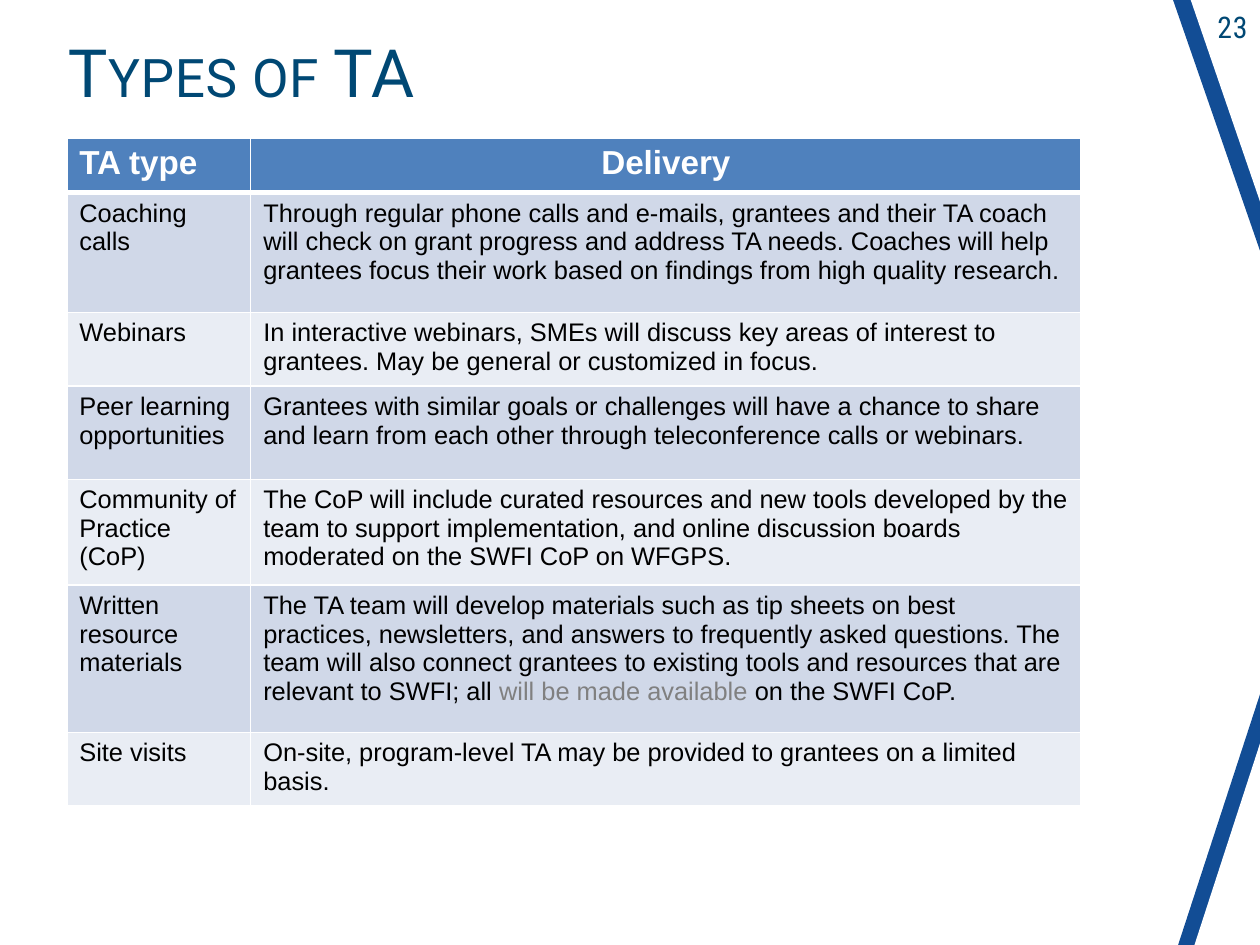
from lxml import etree
from pptx import Presentation
from pptx.dml.color import RGBColor
from pptx.enum.shapes import MSO_SHAPE
from pptx.enum.text import MSO_ANCHOR, PP_ALIGN
from pptx.oxml.ns import qn
from pptx.util import Inches, Pt

TRIANGLE = MSO_SHAPE.ISOSCELES_TRIANGLE
LEFT, CENTER, RIGHT = PP_ALIGN.LEFT, PP_ALIGN.CENTER, PP_ALIGN.RIGHT
TOP, MIDDLE = MSO_ANCHOR.TOP, MSO_ANCHOR.MIDDLE

COLUMN_WIDTHS = [1.46, 6.59]
ROW_HEIGHTS = [0.43, 0.95, 0.56, 0.74, 0.84, 1.17, 0.56]
HEADER = ["TA type", "Delivery"]

# Text between bars is shown in the muted colour
TA_TYPES = [
    ("Coaching calls",
     "Through regular phone calls and e-mails, grantees and their TA coach will "
     "check on grant progress and address TA needs. Coaches will help grantees "
     "focus their work based on findings from high quality research."),
    ("Webinars",
     "In interactive webinars, SMEs will discuss key areas of interest to "
     "grantees. May be general or customized in focus."),
    ("Peer learning opportunities",
     "Grantees with similar goals or challenges will have a chance to share and "
     "learn from each other through teleconference calls or webinars."),
    ("Community of Practice (CoP)",
     "The CoP will include curated resources and new tools developed by the team "
     "to support implementation, and online discussion boards moderated on the "
     "SWFI CoP on WFGPS."),
    ("Written resource materials",
     "The TA team will develop materials such as tip sheets on best practices, "
     "newsletters, and answers to frequently asked questions. The team will also "
     "connect grantees to existing tools and resources that are relevant to "
     "SWFI; all |will be made available |on the SWFI CoP."),
    ("Site visits",
     "On-site, program-level TA may be provided to grantees on a limited basis."),
]


def rgb(value):
    return RGBColor.from_string(value)


class SlideBuilder:
    navy, blue, white = "004874", "124D95", "FFFFFF"
    header_fill, bands = "4F81BD", ("D0D8E8", "E9EDF4")
    body, muted = "000000", "808080"
    table_font = "Arial"

    def __init__(self, page):
        self.page = page

    def corner_triangle(self, left, top, width, height, color, flipped=False):
        shape = self.page.shapes.add_shape(
            TRIANGLE, Inches(left), Inches(top), Inches(width), Inches(height))
        shape.adjustments[0] = 1
        shape.shadow.inherit = False
        shape.fill.solid()
        shape.fill.fore_color.rgb = rgb(color)
        shape.line.fill.background()
        if flipped:
            shape.element.spPr.find(qn("a:xfrm")).set("flipV", "1")

    def label(self, text, left, top, width, height, font, size,
              align=LEFT, anchor=TOP, small_caps=False, line_spacing=1.0):
        box = self.page.shapes.add_textbox(
            Inches(left), Inches(top), Inches(width), Inches(height))
        frame = box.text_frame
        frame.word_wrap = True
        frame.vertical_anchor = anchor
        para = frame.paragraphs[0]
        para.alignment = align
        para.line_spacing = line_spacing
        span = para.add_run()
        span.text = text
        self.style(para.font, font, size, self.navy)
        properties = span.font._element
        properties.set("spc", "40")
        if small_caps:
            properties.set("cap", "small")

    def style(self, font, name, size, color, bold=False):
        font.name, font.size, font.bold = name, Pt(size), bold
        font.color.rgb = rgb(color)

    def borders(self, cell, bottom):
        properties = cell._tc.get_or_add_tcPr()
        widths = {"a:lnL": 1, "a:lnR": 1, "a:lnT": 1, "a:lnB": bottom}
        for index, (tag, width) in enumerate(widths.items()):
            line = etree.Element(qn(tag), w=str(Pt(width)))
            fill = etree.SubElement(line, qn("a:solidFill"))
            etree.SubElement(fill, qn("a:srgbClr"), val=self.white)
            properties.insert(index, line)

    def cell(self, cell, text, fill, size, color, bold=False, align=LEFT, bottom=1):
        cell.margin_left = cell.margin_right = Inches(0.1)
        cell.margin_top = cell.margin_bottom = Inches(0.05)
        cell.fill.solid()
        cell.fill.fore_color.rgb = rgb(fill)
        self.borders(cell, bottom)
        para = cell.text_frame.paragraphs[0]
        para.alignment = align
        self.style(para.font, self.table_font, size, color, bold)
        for index, part in enumerate(text.split("|")):
            span = para.add_run()
            span.text = part
            if index % 2:
                span.font.color.rgb = rgb(self.muted)

    def table(self, left, top, header, rows):
        table = self.page.shapes.add_table(
            len(rows) + 1, len(header), Inches(left), Inches(top),
            Inches(sum(COLUMN_WIDTHS)), Inches(sum(ROW_HEIGHTS))).table
        for column, width in zip(table.columns, COLUMN_WIDTHS):
            column.width = Inches(width)
        for row, height in zip(table.rows, ROW_HEIGHTS):
            row.height = Inches(height)
        for column, (text, align) in enumerate(zip(header, (LEFT, CENTER))):
            self.cell(table.cell(0, column), text, self.header_fill, 19,
                      self.white, bold=True, align=align, bottom=3)
        for number, row in enumerate(rows, start=1):
            for column, text in enumerate(row):
                self.cell(table.cell(number, column), text,
                          self.bands[(number - 1) % 2], 14.5, self.body,
                          bottom=1)
        # The header's thick rule is shared with the row below it
        for column in range(len(header)):
            edge = table.cell(1, column)._tc.tcPr.find(qn("a:lnT"))
            edge.set("w", str(Pt(3)))


def main():
    deck = Presentation()
    deck.slide_width, deck.slide_height = Inches(10), Inches(7.5)
    slide = SlideBuilder(deck.slides.add_slide(deck.slide_layouts[6]))

    # Top corner stripe and page number
    slide.corner_triangle(9.31, 0, 0.69, 1.99, slide.blue, flipped=True)
    slide.corner_triangle(9.45, 0, 0.55, 1.6, slide.white, flipped=True)
    slide.label("23", 9.2, 0.02, 0.8, 0.39, "Roboto Condensed", 17, align=RIGHT)

    # Bottom corner stripe
    slide.corner_triangle(9.35, 5.51, 0.65, 1.99, slide.blue)
    slide.corner_triangle(9.48, 5.9, 0.52, 1.6, slide.white)

    # Title
    slide.label("Types of TA", 0.44, 0.19, 7.56, 0.85, "Roboto", 38,
                anchor=MIDDLE, small_caps=True, line_spacing=0.85)

    # Table of assistance types
    slide.table(0.53, 1.1, HEADER, TA_TYPES)

    deck.save("out.pptx")


if __name__ == "__main__":
    main()
